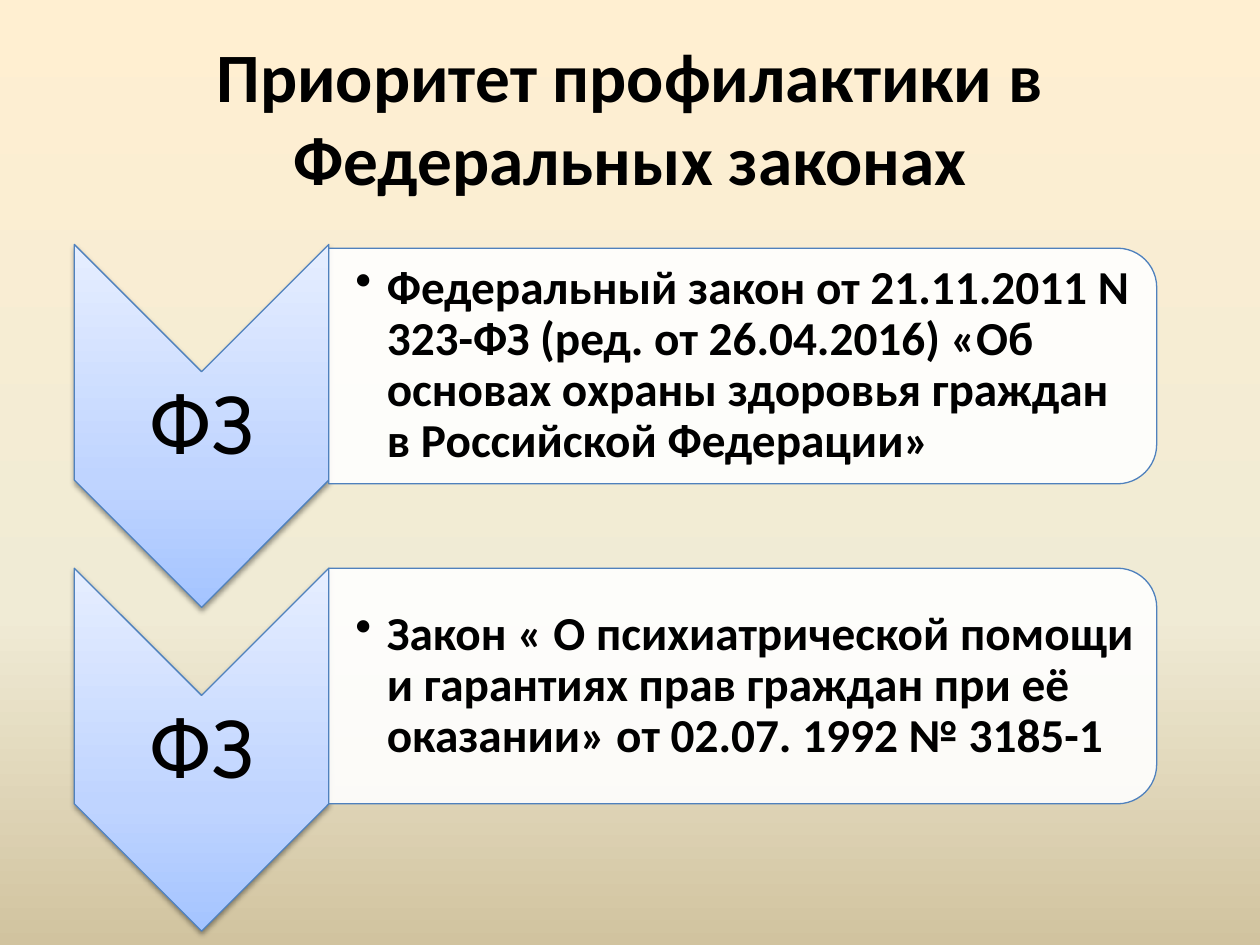
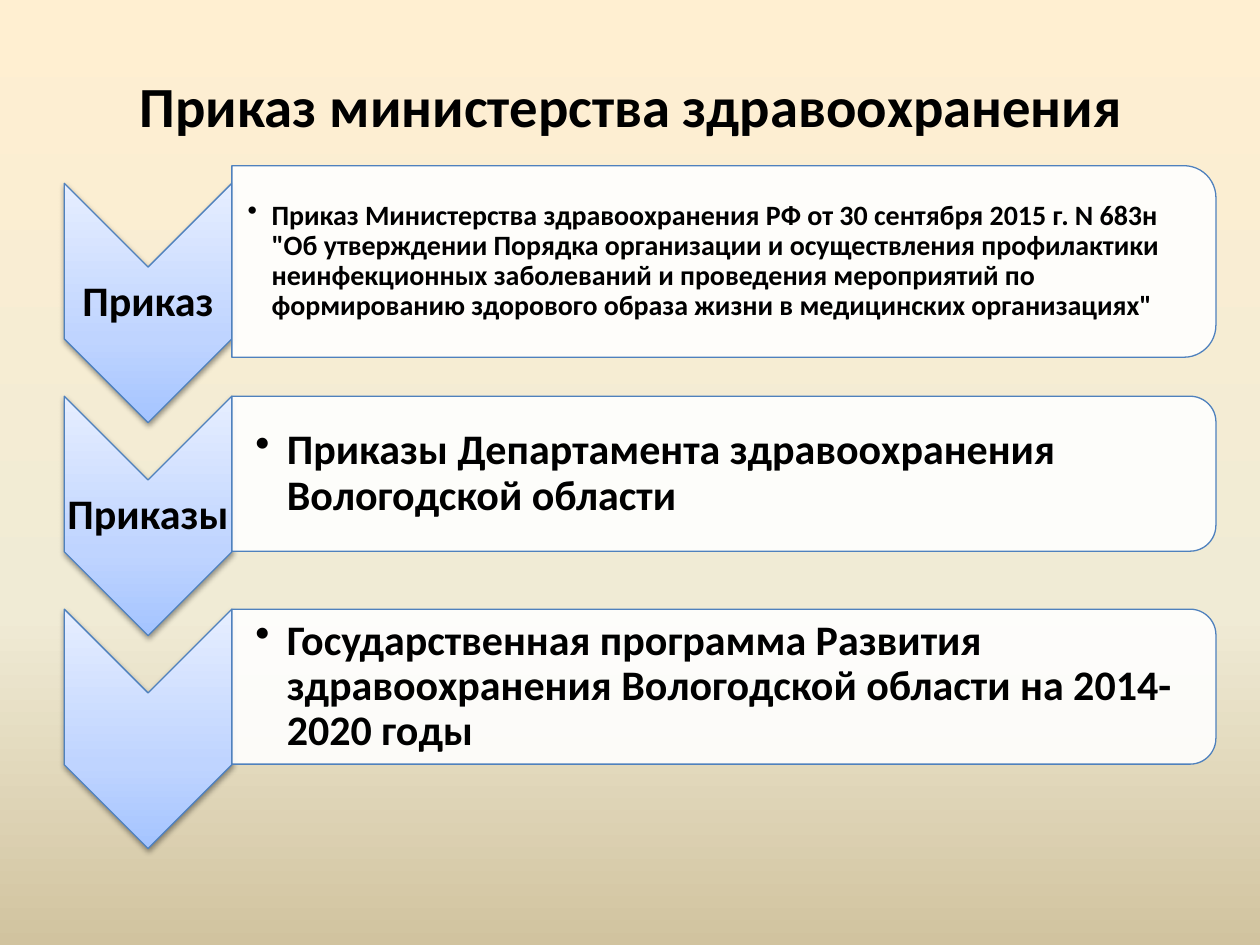
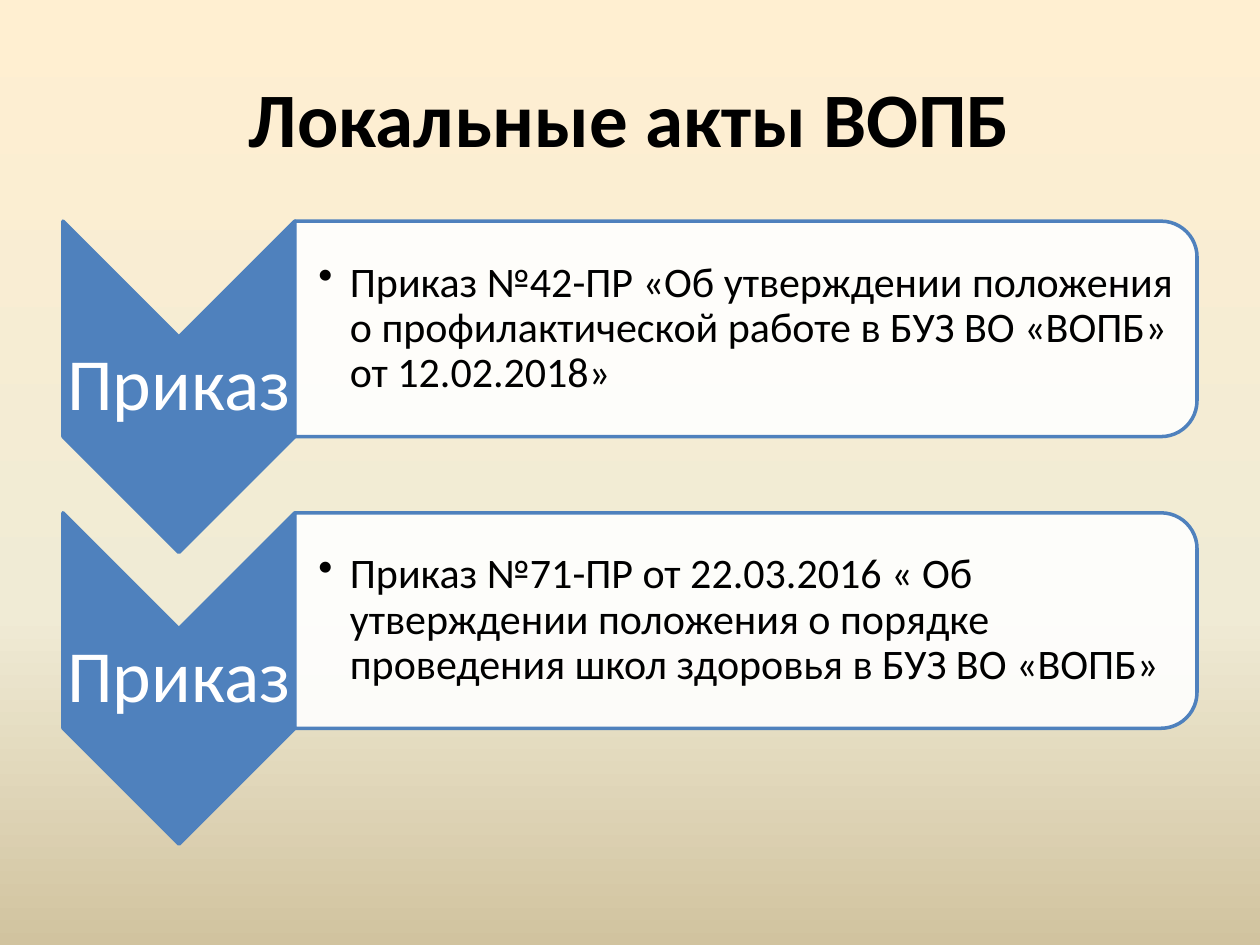
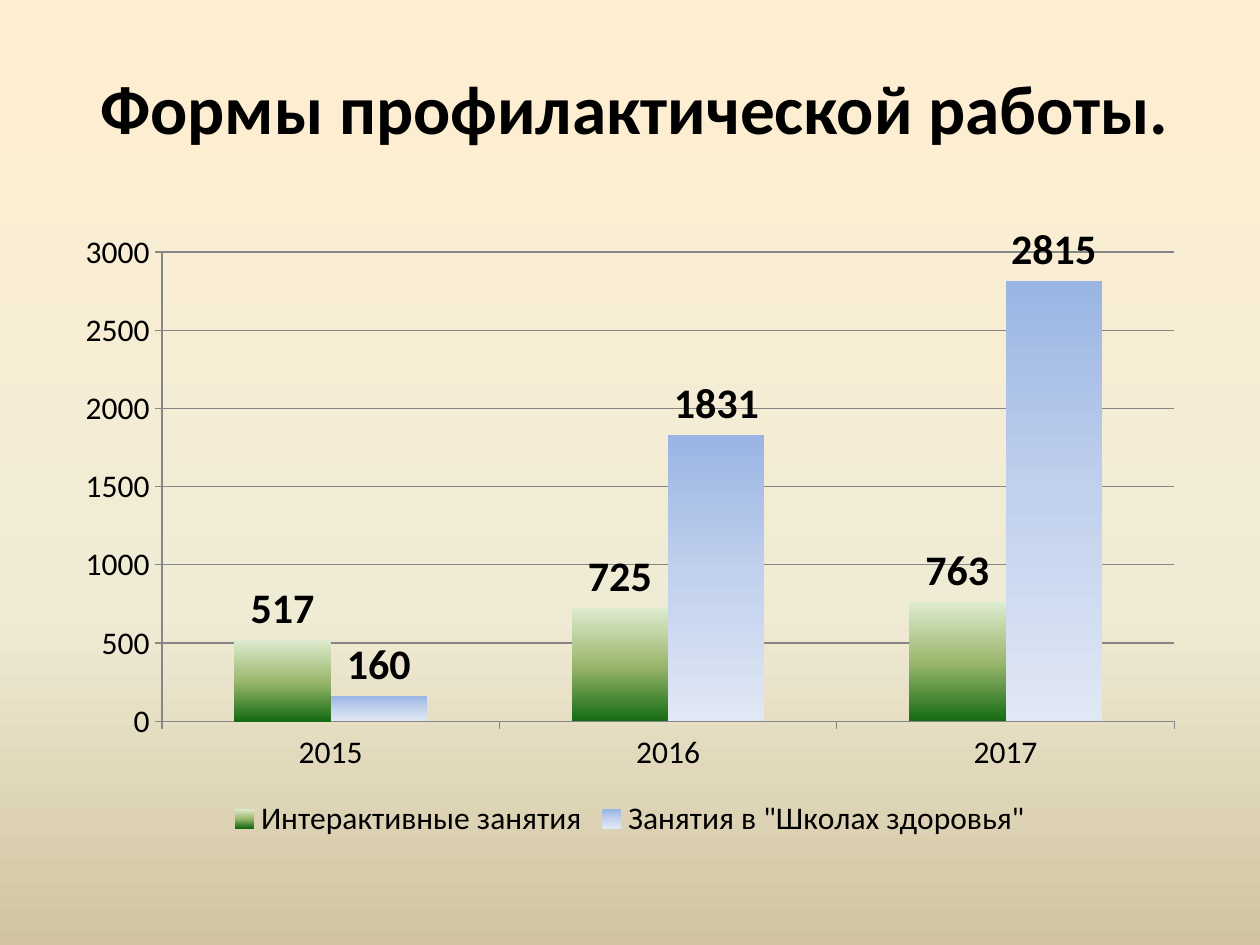
from dataclasses import dataclass
from typing import Optional

from pptx import Presentation, util as u
from pptx.chart.data import CategoryChartData
from pptx.dml.color import RGBColor
from pptx.enum import chart as charts, shapes, text
from pptx.oxml import parse_xml
from pptx.oxml.ns import nsdecls, qn

# Shared look: a grid of 100 columns by 75 rows covers the slide
WIDTH, HEIGHT = u.Inches(10), u.Inches(7.5)
CELL = WIDTH / 100
FONT = "Calibri"
BLACK, WHITE, BLUE, GREY = "000000", "FFFFFF", "4F81BD", "868686"
CORNER_INSET = 0.0488  # share of a panel's height lost to its round corners
TITLE_SIZE = 39.6


@dataclass(frozen=True)
class Box:
    left: float
    top: float
    width: float
    height: float

    def lengths(self) -> list[u.Emu]:
        return [cells(value) for value in (self.left, self.top, self.width, self.height)]

    def turned(self) -> "Box":
        """The box that covers this one after a quarter turn."""
        shift = (self.width - self.height) / 2
        return Box(self.left + shift, self.top - shift, self.height, self.width)


@dataclass(frozen=True)
class Gradient:
    stops: tuple[tuple[int, str], ...]
    angle: int


@dataclass(frozen=True)
class Step:
    label: str
    body: str
    size: Optional[float] = None
    indent: float = 2.5
    panel_top: float = 0  # rows below the chevron's top
    panel_height: Optional[float] = None


@dataclass(frozen=True)
class Ladder:
    chevron: Box
    pitch: float
    panel_width: float
    panel_height: float
    label_size: float
    body_size: float
    steps: tuple[Step, ...]
    label_bold: bool = False
    body_bold: bool = True
    solid: bool = False


@dataclass(frozen=True)
class Heading:
    words: str
    box: Box = Box(5, 3, 90, 12.5)
    size: float = TITLE_SIZE
    bottom_gap: float = 0.5


@dataclass(frozen=True)
class Series:
    name: str
    values: tuple[int, ...]
    gradient: Gradient


BACKGROUND = Gradient(((0, "FFEFD1"), (65, "F0EBD5"), (100, "D1C39F")), 90)
CHEVRON = Gradient(((0, "A4C4FF"), (35, "BFD4FF"), (100, "E6EEFF")), 270)
GREEN_BARS = Gradient(((0, "DDEBCF"), (50, "9CB86E"), (100, "156B13")), 90)
BLUE_BARS = Gradient(((0, "9AB5E4"), (50, "C2D1ED"), (100, "E1E8F5")), 90)

# Slide content
LADDERS = (
    (
        Heading("Приоритет профилактики в Федеральных законах"),
        Ladder(Box(5.9, 19.4, 20.2, 28.8), 25.7, 65.7, 18.7, 51, 27, (
            Step("ФЗ", "Федеральный закон от 21.11.2011 N 323-ФЗ (ред. от 26.04.2016) "
                 "«Об основах охраны здоровья граждан в Российской Федерации»", panel_top=0.3),
            Step("ФЗ", "Закон « О психиатрической помощи и гарантиях прав граждан "
                 "при её оказании» от 02.07. 1992 № 3185-1"),
        )),
    ),
    (
        Heading("Приказ министерства здравоохранения", Box(5.1, 5.2, 90, 12.5), 32.4, 6.7),
        Ladder(Box(5.1, 14.55, 13.3, 19), 16.9, 78.1, 12.3, 24, 24, (
            Step("Приказ", "Приказ Министерства здравоохранения РФ от 30 сентября 2015 г. N 683н\v"
                 "\"Об утверждении Порядка организации и осуществления профилактики "
                 "неинфекционных заболеваний и проведения мероприятий по формированию "
                 "здорового образа жизни в медицинских организациях\"",
                 16, 1.9, -1.4, 15.2),
            Step("Приказы", "Приказы Департамента здравоохранения Вологодской области"),
            Step("", "Государственная программа Развития здравоохранения "
                 "Вологодской области на 2014-2020 годы"),
        ), label_bold=True),
    ),
    (
        Heading("Локальные акты ВОПБ", size=44),
        Ladder(Box(5, 17.55, 18.4, 26.3), 23.15, 71.6, 17.1, 42, 24, (
            Step("Приказ", "Приказ №42-ПР «Об утверждении положения о профилактической "
                 "работе в БУЗ ВО «ВОПБ» от 12.02.2018»"),
            Step("Приказ", "Приказ №71-ПР от 22.03.2016 « Об утверждении положения "
                 "о порядке проведения школ здоровья в БУЗ ВО «ВОПБ»"),
        ), body_bold=False, solid=True),
    ),
)
CHART_HEADING = Heading("Формы профилактической работы.", Box(5.4, 5.3, 90, 12.5), bottom_gap=6.7)
YEARS = ("2015", "2016", "2017")
LESSONS = (
    Series("Интерактивные занятия", (517, 725, 763), GREEN_BARS),
    Series("Занятия в \"Школах здоровья\"", (160, 1831, 2815), BLUE_BARS),
)


# Helpers
def cells(count: float) -> u.Emu:
    return u.Emu(round(count * CELL))


def colour(code: str) -> RGBColor:
    return RGBColor.from_string(code)


def set_font(font, size: float, code: str = BLACK, bold: bool = False) -> None:
    font.name, font.size, font.bold = FONT, u.Pt(size), bold
    font.color.rgb = colour(code)


def set_gradient(fill, root, gradient: Gradient) -> None:
    fill.gradient()
    old = root.find(".//" + qn("a:gradFill"))
    stops = "".join(f'<a:gs pos="{share * 1000}"><a:srgbClr val="{code}"/></a:gs>'
                    for share, code in gradient.stops)
    old.getparent().replace(old, parse_xml(
        f'<a:gradFill {nsdecls("a")} rotWithShape="0"><a:gsLst>{stops}</a:gsLst>'
        f'<a:lin ang="{gradient.angle * 60000}" scaled="0"/></a:gradFill>'))


def add_shadow(shape) -> None:
    effects = shape._element.spPr.find(qn("a:effectLst"))
    effects.append(parse_xml(
        f'<a:outerShdw {nsdecls("a")} blurRad="40000" dist="20000" dir="5400000" '
        'rotWithShape="0"><a:srgbClr val="000000"><a:alpha val="38000"/></a:srgbClr>'
        '</a:outerShdw>'))


def add_turned_shape(slide, kind, box: Box, line_width: float):
    shape = slide.shapes.add_shape(kind, *box.turned().lengths())
    shape.rotation = 90
    shape.shadow.inherit = False
    shape.line.color.rgb = colour(BLUE)
    shape.line.width = u.Pt(line_width)
    return shape


def add_text(slide, box: Box, words: str, size: float, code: str, bold: bool,
             margin: float, left_margin: float):
    frame = slide.shapes.add_textbox(*box.lengths()).text_frame
    frame.word_wrap = True
    frame.vertical_anchor = text.MSO_ANCHOR.MIDDLE
    frame.margin_top = frame.margin_right = frame.margin_bottom = cells(margin)
    frame.margin_left = cells(left_margin)
    paragraph = frame.paragraphs[0]
    paragraph.text = words
    paragraph.line_spacing = 0.9
    for run in paragraph.runs:
        set_font(run.font, size, code, bold)
    return paragraph


def add_bullet(paragraph, indent: float) -> None:
    paragraph.level = 1
    properties = paragraph._p.get_or_add_pPr()
    properties.set("marL", str(cells(indent)))
    properties.set("indent", str(-cells(indent)))
    properties.append(parse_xml(f'<a:buChar {nsdecls("a")} char="•"/>'))


def add_titled_slide(presentation, heading: Heading):
    slide = presentation.slides.add_slide(presentation.slide_layouts[5])
    title = slide.shapes.title
    title.left, title.top, title.width, title.height = heading.box.lengths()
    frame = title.text_frame
    frame.text = heading.words
    frame.auto_size = text.MSO_AUTO_SIZE.NONE
    frame.vertical_anchor = text.MSO_ANCHOR.MIDDLE
    frame.margin_bottom = cells(heading.bottom_gap)
    paragraph = frame.paragraphs[0]
    paragraph.alignment = text.PP_ALIGN.CENTER
    set_font(paragraph.runs[0].font, heading.size, bold=True)
    return slide


# Chevron and panel of one step
def add_chevron(slide, ladder: Ladder, step: Step, box: Box) -> None:
    chevron = add_turned_shape(slide, shapes.MSO_SHAPE.CHEVRON, box, 2 if ladder.solid else 0.75)
    if ladder.solid:
        chevron.fill.solid()
        chevron.fill.fore_color.rgb = colour(BLUE)
    else:
        set_gradient(chevron.fill, chevron._element, CHEVRON)
        add_shadow(chevron)
    if step.label:
        label_box = Box(box.left, box.top + box.width / 2, box.width, box.height - box.width)
        margin = ladder.label_size / 144
        paragraph = add_text(slide, label_box, step.label, ladder.label_size,
                             WHITE if ladder.solid else BLACK, ladder.label_bold, margin, margin)
        paragraph.alignment = text.PP_ALIGN.CENTER


def add_panel(slide, ladder: Ladder, step: Step, box: Box) -> None:
    panel = add_turned_shape(slide, shapes.MSO_SHAPE.ROUND_2_SAME_RECTANGLE, box,
                             2 if ladder.solid else 0.75)
    panel.fill.solid()
    panel.fill.fore_color.rgb = colour(WHITE)
    panel._element.spPr.find(".//" + qn("a:srgbClr")).append(
        parse_xml(f'<a:alpha {nsdecls("a")} val="90000"/>'))
    inset = box.height * CORNER_INSET
    size = step.size or ladder.body_size
    body_box = Box(box.left, box.top + inset, box.width - inset, box.height - 2 * inset)
    paragraph = add_text(slide, body_box, step.body, size, BLACK, ladder.body_bold,
                         0.2, size * 0.078)
    add_bullet(paragraph, step.indent)


def add_ladder(slide, ladder: Ladder) -> None:
    first = ladder.chevron
    for index, step in enumerate(ladder.steps):
        top = first.top + index * ladder.pitch
        add_chevron(slide, ladder, step, Box(first.left, top, first.width, first.height))
        add_panel(slide, ladder, step, Box(first.left + first.width, top + step.panel_top,
                                           ladder.panel_width,
                                           step.panel_height or ladder.panel_height))


# Column chart
def add_lessons_chart(slide) -> None:
    data = CategoryChartData()
    data.categories = YEARS
    for series in LESSONS:
        data.add_series(series.name, series.values)
    chart = slide.shapes.add_chart(charts.XL_CHART_TYPE.COLUMN_CLUSTERED,
                                   *Box(5, 17.5, 90, 49.5).lengths(), data).chart
    set_font(chart.font, 18)
    chart.has_title = False
    chart.has_legend = True
    chart.legend.position = charts.XL_LEGEND_POSITION.BOTTOM
    chart.legend.include_in_layout = False
    values = chart.value_axis
    values.minimum_scale, values.maximum_scale, values.major_unit = 0, 3000, 500
    values.has_major_gridlines = True
    for axis in (chart.category_axis, values):
        axis.major_tick_mark = charts.XL_TICK_MARK.OUTSIDE
    for ruled in (chart.category_axis, values, values.major_gridlines):
        ruled.format.line.color.rgb = colour(GREY)
        ruled.format.line.width = u.Pt(0.75)
    plot = chart.plots[0]
    plot.gap_width, plot.overlap = 150, 0
    plot.vary_by_categories = False
    for bars, series in zip(plot.series, LESSONS):
        set_gradient(bars.format.fill, bars._element, series.gradient)
        labels = bars.data_labels
        labels.show_value = True
        labels.position = charts.XL_LABEL_POSITION.OUTSIDE_END
        set_font(labels.font, 24, bold=True)


def main() -> None:
    presentation = Presentation()
    presentation.slide_width, presentation.slide_height = WIDTH, HEIGHT
    master = presentation.slide_master
    set_gradient(master.background.fill, master._element, BACKGROUND)
    for heading, ladder in LADDERS:
        add_ladder(add_titled_slide(presentation, heading), ladder)
    add_lessons_chart(add_titled_slide(presentation, CHART_HEADING))
    presentation.save("out.pptx")


if __name__ == "__main__":
    main()
